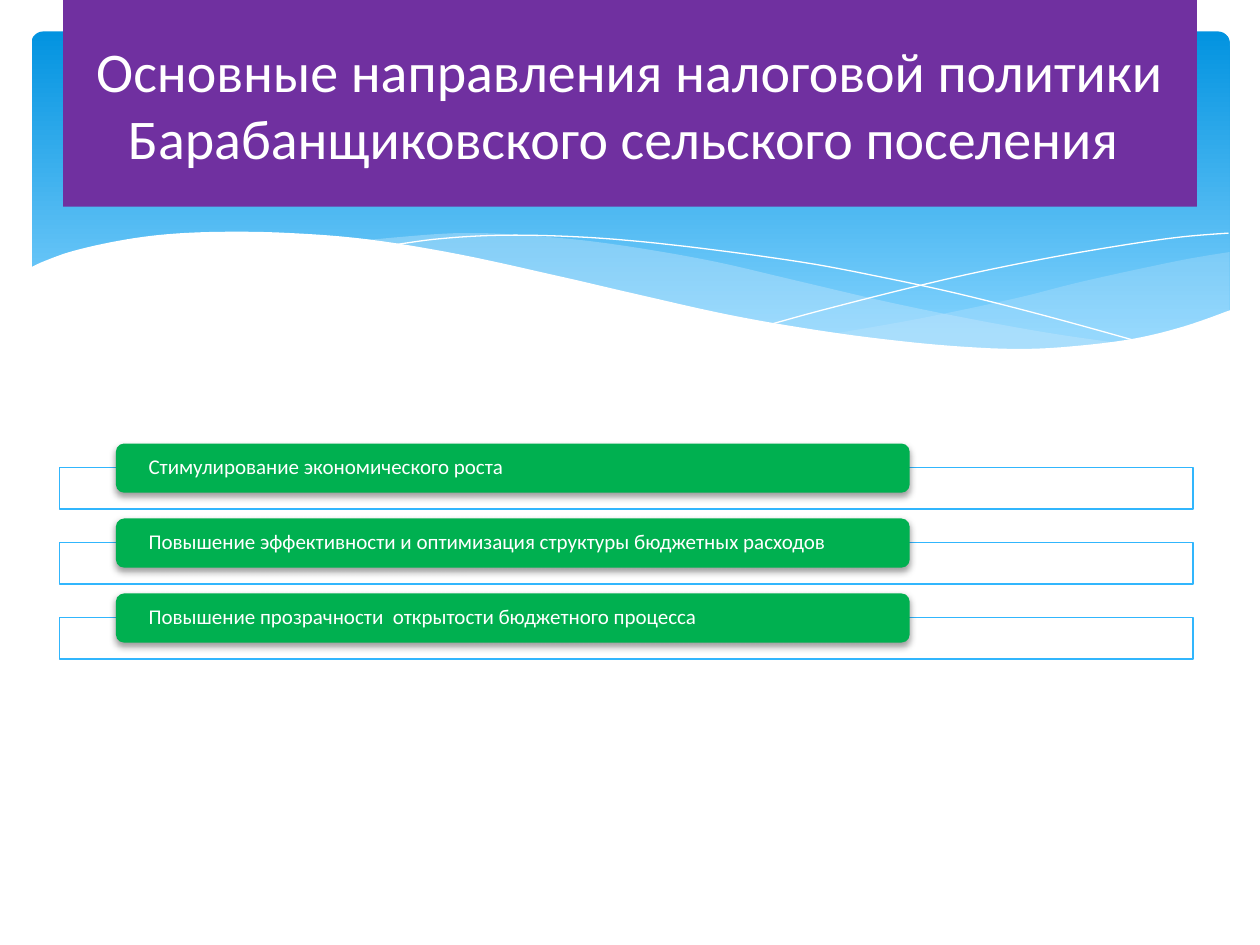
from lxml.etree import SubElement
from pptx import Presentation
from pptx.dml.color import RGBColor
from pptx.enum.shapes import MSO_SHAPE
from pptx.enum.text import MSO_ANCHOR, MSO_AUTO_SIZE, PP_ALIGN
from pptx.oxml.ns import qn
from pptx.util import Inches, Pt

COLORS = {
    "sky_top": "0293E0",
    "sky_bottom": "83D3FE",
    "mist": "C6E7FC",
    "white": "FFFFFF",
    "frame": "31B6FD",
    "goal": "00B050",
    "banner": "7030A0",
    "shadow": "000000",
}
RGB = {name: RGBColor.from_string(value) for name, value in COLORS.items()}
FONT = "Calibri"


def smooth(anchors, steps=6):
    padded = [anchors[0], *anchors, anchors[-1]]
    curve = []
    for a, b, c, d in zip(padded, padded[1:], padded[2:], padded[3:]):
        for step in range(steps):
            t = step / steps
            curve.append(tuple(
                q + t * (r - p) / 2 + t**2 * (2 * p - 5 * q + 4 * r - s) / 2
                + t**3 * (3 * q - p - 3 * r + s) / 2
                for p, q, r, s in zip(a, b, c, d)
            ))
    return curve + [anchors[-1]]


def paint(shape, color, opacity=100):
    shape.shadow.inherit = False
    shape.fill.solid()
    shape.fill.fore_color.rgb = RGB[color]
    shape.line.fill.background()
    if opacity < 100:
        tint = shape.fill._xPr.find(qn("a:solidFill"))[0]
        SubElement(tint, qn("a:alpha"), val=str(opacity * 1000))


prs = Presentation()
prs.slide_width, prs.slide_height = Inches(10), Inches(7.5)
col = prs.slide_width / 10
row = prs.slide_height / 7.5
slide = prs.slides.add_slide(prs.slide_layouts[5])
shapes = slide.shapes

sky = shapes.add_shape(
    MSO_SHAPE.ROUNDED_RECTANGLE,
    int(0.25 * col), int(0.25 * row), int(9.51 * col), int(2.7 * row))
sky.adjustments[0] = 0.034
sky.shadow.inherit = False
sky.line.fill.background()
sky.fill.gradient()
sky.fill.gradient_angle = 270
for stop, color, position in zip(sky.fill.gradient_stops, ("sky_top", "sky_bottom"), (0, 0.9)):
    stop.color.rgb = RGB[color]
    stop.position = position

right_swell = (
    smooth([(9.76, 2), (9.35, 2.07), (8.61, 2.23), (8.05, 2.37), (7.29, 2.53), (6.61, 2.65)])
    + smooth([(6.61, 2.65), (7.05, 2.71), (7.57, 2.76), (8.14, 2.78), (8.63, 2.75),
              (9.05, 2.69), (9.42, 2.59), (9.76, 2.47)])
)
middle_swell = (
    smooth([(8.93, 2.73), (8.37, 2.65), (7.75, 2.54), (7.06, 2.4), (6.29, 2.22),
            (5.69, 2.08), (5.14, 1.98), (4.65, 1.91), (4.2, 1.87), (3.8, 1.85),
            (3.44, 1.86), (2.86, 1.91)])
    + smooth([(2.86, 1.91), (3.42, 1.99), (4.04, 2.11), (4.49, 2.22), (5.3, 2.4),
              (6.01, 2.55), (6.65, 2.66), (7.22, 2.74), (7.73, 2.77), (8.18, 2.78),
              (8.57, 2.77), (8.93, 2.73)])
)
falling_crest = smooth([
    (3.09, 1.95), (3.44, 1.9), (3.87, 1.87), (4.33, 1.87), (4.89, 1.9), (5.56, 1.97),
    (6.36, 2.08), (6.95, 2.19), (7.6, 2.33), (8.31, 2.51), (9.07, 2.72)])
rising_crest = smooth([
    (6.13, 2.57), (6.53, 2.46), (7.2, 2.29), (7.76, 2.16), (8.36, 2.04), (8.95, 1.94),
    (9.38, 1.88), (9.75, 1.85)])
shore = smooth([
    (9.77, 2.46), (9.4, 2.59), (8.99, 2.69), (8.5, 2.75), (8.09, 2.77), (7.61, 2.75),
    (7.08, 2.7), (6.48, 2.62), (5.79, 2.5), (5.03, 2.33), (4.47, 2.2), (3.65, 2.02),
    (2.92, 1.9), (2.3, 1.85), (1.77, 1.84), (1.32, 1.86), (0.95, 1.91), (0.59, 1.99),
    (0.36, 2.07), (0.23, 2.13)]) + [(0.23, 3.29), (9.77, 3.29)]

for outline, color, opacity, closed in (
    (right_swell, "mist", 29, True),
    (middle_swell, "mist", 40, True),
    (falling_crest, "white", 100, False),
    (rising_crest, "white", 100, False),
    (shore, "white", 100, True),
):
    points = [(int(x * col), int(y * row)) for x, y in outline]
    builder = shapes.build_freeform(*points[0])
    builder.add_line_segments(points[1:], close=closed)
    wave = builder.convert_to_shape()
    paint(wave, color, opacity)
    if not closed:
        wave.fill.background()
        wave.line.color.rgb = RGB[color]
        wave.line.width = Pt(0)

goals = (
    "Стимулирование экономического роста",
    "Повышение эффективности и оптимизация структуры бюджетных расходов",
    "Повышение прозрачности  открытости бюджетного процесса",
)
for index, goal in enumerate(goals):
    top = (3.52 + 0.595 * index) * row
    frame = shapes.add_shape(
        MSO_SHAPE.RECTANGLE,
        int(0.47 * col), int(top + 0.19 * row), int(9 * col), int(0.33 * row))
    paint(frame, "white", 90)
    frame.line.color.rgb = RGB["frame"]
    frame.line.width = Pt(0.75)

    label = shapes.add_shape(
        MSO_SHAPE.ROUNDED_RECTANGLE,
        int(0.92 * col), int(top), int(6.3 * col), int(0.39 * row))
    paint(label, "goal")
    effects = label.element.spPr.find(qn("a:effectLst"))
    shadow = SubElement(effects, qn("a:outerShdw"), blurRad=str(Pt(4)), dist=str(Pt(2)),
                        dir="5400000", rotWithShape="0")
    shade = SubElement(shadow, qn("a:srgbClr"), val=COLORS["shadow"])
    SubElement(shade, qn("a:alpha"), val="38000")

    text = label.text_frame
    text.text = goal
    text.word_wrap = True
    text.vertical_anchor = MSO_ANCHOR.MIDDLE
    text.margin_left = text.margin_right = int(0.24 * col)
    text.margin_top = text.margin_bottom = 0
    line = text.paragraphs[0]
    line.alignment = PP_ALIGN.LEFT
    line.line_spacing = 0.9
    line.font.name = FONT
    line.font.size = Pt(12)
    line.font.color.rgb = RGB["white"]

banner = shapes.title
banner.left, banner.top = int(0.5 * col), 0
banner.width, banner.height = int(9 * col), int(1.64 * row)
banner.fill.solid()
banner.fill.fore_color.rgb = RGB["banner"]
banner.text_frame.text = "Основные направления налоговой политики Барабанщиковского сельского поселения "
banner.text_frame.auto_size = MSO_AUTO_SIZE.NONE
banner.text_frame.vertical_anchor = MSO_ANCHOR.MIDDLE
heading = banner.text_frame.paragraphs[0]
heading.alignment = PP_ALIGN.CENTER
for run in heading.runs:
    run.font.name = FONT
    run.font.size = Pt(32)
    run.font.color.rgb = RGB["white"]
banner.element.getparent().append(banner.element)

prs.save("out.pptx")
